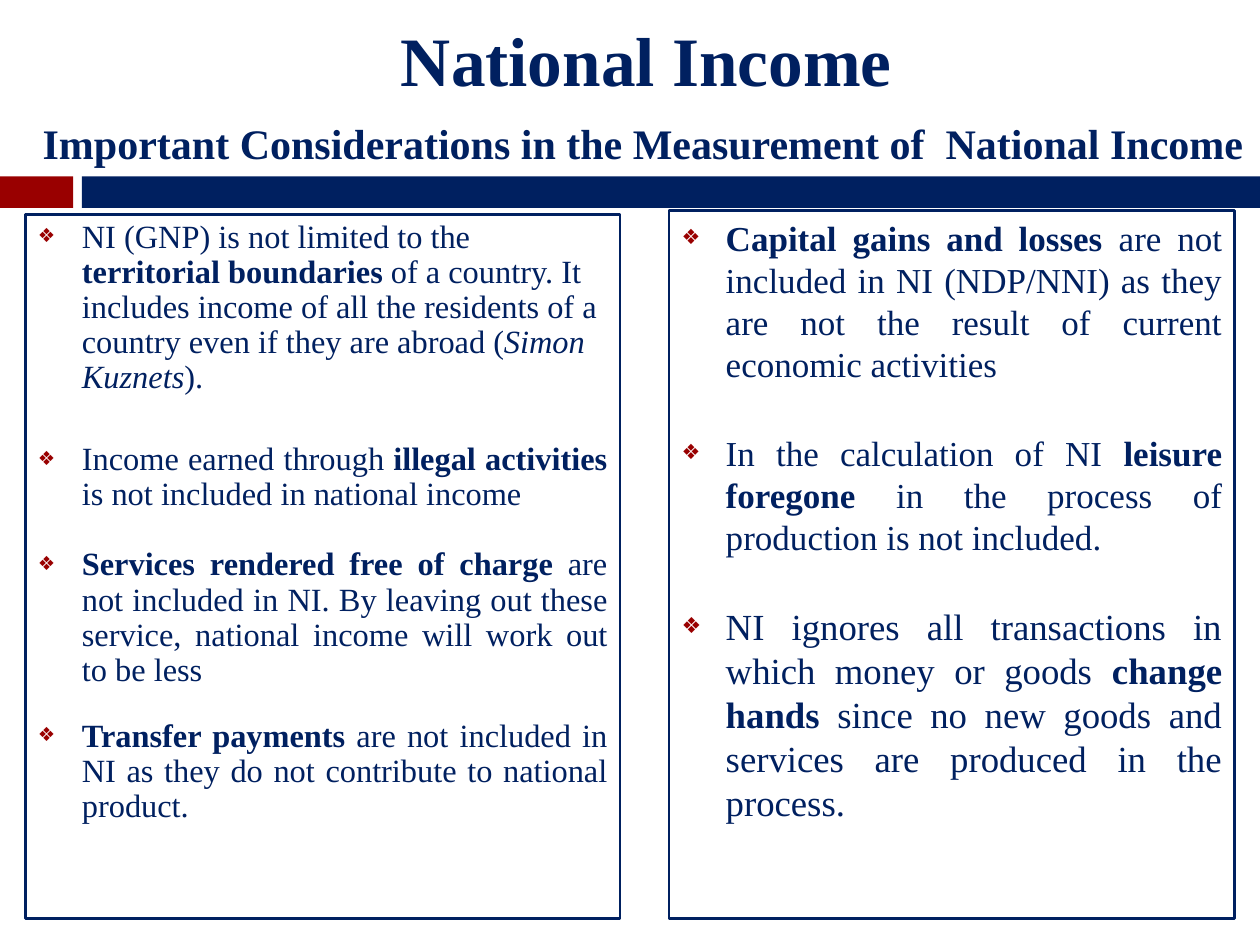
from lxml import etree
from pptx import Presentation
from pptx.dml.color import RGBColor
from pptx.enum.shapes import MSO_SHAPE
from pptx.enum.text import MSO_ANCHOR, MSO_AUTO_SIZE, PP_ALIGN
from pptx.oxml.ns import qn
from pptx.util import Inches, Pt

RECTANGLE = MSO_SHAPE.RECTANGLE
TOP, MIDDLE = MSO_ANCHOR.TOP, MSO_ANCHOR.MIDDLE
NO_AUTOFIT = MSO_AUTO_SIZE.NONE
LEFT, CENTER, JUSTIFY = PP_ALIGN.LEFT, PP_ALIGN.CENTER, PP_ALIGN.JUSTIFY
WIDTH, HEIGHT = 10, 7.5
TWO_CONTENT = 3
COLORS = {"navy": "002060", "red": "990000", "white": "FFFFFF"}


def color(name):
    """Return the named palette colour."""
    return RGBColor.from_string(COLORS[name])


def write(paragraph, runs, size, font="Times New Roman", ink="navy",
          align=LEFT, line=1.0, before=0):
    """Fill a paragraph with (text, style) runs; style holds b or i."""
    paragraph.alignment = align
    paragraph.line_spacing = line
    paragraph.space_before = Pt(before)
    paragraph.space_after = Pt(0)
    for text, style in runs:
        run = paragraph.add_run()
        run.text = text
        run.font.name = font
        run.font.size = Pt(size)
        run.font.bold = "b" in style
        run.font.italic = "i" in style
        run.font.color.rgb = color(ink)


def add_bullet(paragraph, indent=0.35):
    """Give a paragraph a small red diamond bullet with a hanging indent."""
    properties = paragraph._p.get_or_add_pPr()
    properties.set("marL", str(Inches(indent)))
    properties.set("indent", str(-Inches(indent)))
    bullet_color = etree.SubElement(properties, qn("a:buClr"))
    etree.SubElement(bullet_color, qn("a:srgbClr"), val=COLORS["red"])
    etree.SubElement(properties, qn("a:buSzPct"), val="60000")
    etree.SubElement(properties, qn("a:buChar"), char="\u2756")


class Deck:
    """Holds the presentation, its style and the current slide."""

    def __init__(self):
        """Start a presentation with one two-content slide."""
        self.presentation = Presentation()
        self.presentation.slide_width = Inches(WIDTH)
        self.presentation.slide_height = Inches(HEIGHT)
        layout = self.presentation.slide_layouts[TWO_CONTENT]
        self.slide = self.presentation.slides.add_slide(layout)

    def area(self, left, top, width, height):
        """Turn percentages of the slide into lengths."""
        across, down = WIDTH / 100, HEIGHT / 100
        return [Inches(value) for value in
                (left * across, top * down, width * across, height * down)]

    def place(self, shape, box, anchor):
        """Move a text shape and return its prepared text frame."""
        shape.left, shape.top, shape.width, shape.height = self.area(*box)
        frame = shape.text_frame
        frame.word_wrap = True
        frame.auto_size = NO_AUTOFIT
        frame.vertical_anchor = anchor
        return frame

    def bar(self, box, fill):
        """Add a plain coloured bar."""
        shape = self.slide.shapes.add_shape(RECTANGLE, *self.area(*box))
        shape.shadow.inherit = False
        shape.fill.solid()
        shape.fill.fore_color.rgb = color(fill)
        shape.line.fill.background()

    def title(self, text, box, size):
        """Fill the title placeholder."""
        frame = self.place(self.slide.shapes.title, box, MIDDLE)
        write(frame.paragraphs[0], [(text, "b")], size, align=CENTER)

    def subtitle(self, text, box, size):
        """Add the line under the title."""
        shape = self.slide.shapes.add_textbox(*self.area(*box))
        frame = self.place(shape, box, MIDDLE)
        write(frame.paragraphs[0], [(text, "b")], size, align=JUSTIFY)

    def panel(self, index, box, points, line):
        """Fill a body placeholder as a framed list."""
        shape = self.slide.placeholders[index]
        frame = self.place(shape, box, TOP)
        shape.fill.solid()
        shape.fill.fore_color.rgb = color("white")
        shape.line.color.rgb = color("navy")
        shape.line.width = Pt(1.5)
        for number, (runs, size, align, before) in enumerate(points):
            paragraph = frame.add_paragraph() if number else frame.paragraphs[0]
            write(paragraph, runs, size, align=align, line=line, before=before)
            add_bullet(paragraph)


CONSIDERATIONS = [
    ([("NI (GNP) is not limited to the ", ""), ("territorial boundaries ", "b"),
      ("of a country. It includes income of all the residents of a country "
       "even if they are abroad (", ""), ("Simon Kuznets", "i"), (").", "")],
     18.5, LEFT, 0),
    ([("Income earned through ", ""), ("illegal activities", "b"),
      (" is not included in national income", "")], 18.5, JUSTIFY, 27),
    ([("Services rendered free of charge ", "b"),
      ("are not included in NI. By leaving out these service, national income "
       "will work out to be less", "")], 18.5, JUSTIFY, 20),
    ([("Transfer payments ", "b"),
      ("are not included in NI as they do not contribute to national product.",
       "")], 18.5, JUSTIFY, 18),
]
EXCLUSIONS = [
    ([("Capital gains and losses", "b"),
      (" are not included in NI (NDP/NNI) as they are not the result of current "
       "economic activities", "")], 20, JUSTIFY, 0),
    ([("In the calculation of NI ", ""), ("leisure foregone", "b"),
      (" in the process of production is not included.", "")],
     20, JUSTIFY, 26.5),
    ([("NI ignores all transactions in which money or goods ", ""),
      ("change hands ", "b"),
      ("since no new goods and services are produced in the process.", "")],
     21, JUSTIFY, 26.5),
]

deck = Deck()
deck.bar((0, 18.67, 5.8, 3.33), "red")
deck.bar((6.5, 18.67, 93.5, 3.33), "navy")
deck.title("National Income", (6.7, 1.73, 89.2, 8.93), 39.6)
deck.subtitle("Important Considerations in the Measurement of  National Income",
              (2.4, 11.2, 98, 7.87), 24)
deck.panel(1, (2, 22.67, 47.2, 74.53), CONSIDERATIONS, 0.9)
deck.panel(2, (53.1, 22.27, 44.9, 74.93), EXCLUSIONS, 1.0)
deck.presentation.save("out.pptx")
